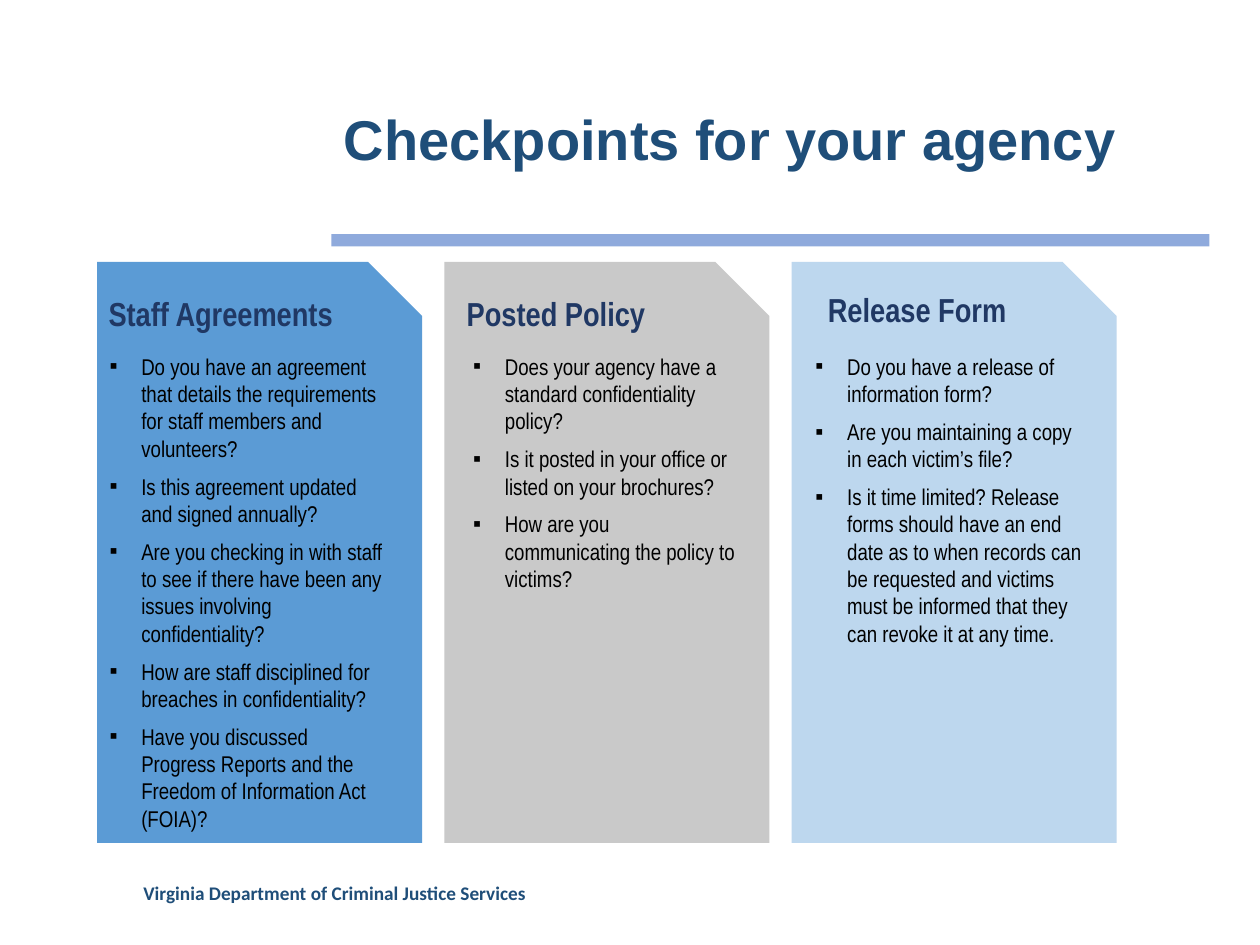
from dataclasses import dataclass

from lxml import etree
from pptx import Presentation
from pptx.dml.color import RGBColor
from pptx.enum import shapes, text
from pptx.oxml.ns import qn
from pptx.util import Cm, Pt


@dataclass(frozen=True)
class Theme:
    navy: str = "1F4E79"
    ink: str = "203864"
    black: str = "000000"
    rule: str = "8FAADC"
    title: int = 32
    head: int = 19
    body: int = 13
    foot: int = 11
    sans: str = "Arial"
    slim: str = "Arial Narrow"
    plain: str = "Calibri"


T = Theme()

# fill, heading, heading shift, heading line spacing, list shift, list width, points
COLS = [
    ("5B9BD5", "Staff Agreements", -0.02, 1.0, 0, 6.02, [
        "Do you have an agreement that details the requirements for staff members and volunteers?",
        "Is this agreement updated and signed annually?",
        "Are you checking in with staff to see if there have been any issues involving confidentiality?",
        "How are staff disciplined for breaches in confidentiality?",
        "Have you discussed Progress Reports and the Freedom of Information Act (FOIA)?"]),
    ("C9C9C9", "Posted Policy", 0.2, 1.0, 0.33, 5.84, [
        "Does your agency have a standard confidentiality policy?",
        "Is it posted in your office or listed on your brochures?",
        "How are you communicating the policy to victims?"]),
    ("BDD7EE", "Release Form", 0.48, 0.9, 0.23, 5.97, [
        "Do you have a release of information form?",
        "Are you maintaining a copy in each victim’s file?",
        "Is it time limited? Release forms should have an end date as to when records can "
        "be requested and victims must be informed that they can revoke it at any time."]),
]


def write(para, words, face, size, color, bold=False):
    run = para.add_run()
    run.text = words
    run.font.name, run.font.size, run.font.bold = face, Pt(size), bold
    run.font.color.rgb = RGBColor.from_string(color)


def block(slide, kind, box, fill):
    shape = slide.shapes.add_shape(kind, *map(Cm, box))
    shape.shadow.inherit = False
    shape.fill.solid()
    shape.fill.fore_color.rgb = RGBColor.from_string(fill)
    shape.line.fill.background()


def frame(slide, box):
    """Add a wrapping text box and return its text frame."""
    area = slide.shapes.add_textbox(*map(Cm, box)).text_frame
    area.word_wrap = True
    return area


def bullet(para):
    props = para._p.get_or_add_pPr()
    props.set("marL", str(Cm(0.64)))
    props.set("indent", str(-Cm(0.64)))
    etree.SubElement(props, qn("a:buFont")).set("typeface", T.sans)
    etree.SubElement(props, qn("a:buChar")).set("char", "▪")


def header(slide, box):
    left, top, width, height = box
    block(slide, shapes.MSO_SHAPE.RECTANGLE, (left, top + 3.7, 17.7, 0.25), T.rule)
    title = slide.shapes.title
    title.left, title.top, title.width, title.height = map(Cm, box)
    area = title.text_frame
    area.word_wrap = True
    area.auto_size = text.MSO_AUTO_SIZE.NONE
    area.vertical_anchor = text.MSO_ANCHOR.MIDDLE
    para = area.paragraphs[0]
    para.alignment = text.PP_ALIGN.LEFT
    para.line_spacing = 0.9
    write(para, "Checkpoints for your agency", T.sans, T.title, T.navy, True)


def column(slide, box, fill, head, shift, pitch, inset, span, points):
    left, top, width, height = box
    block(slide, shapes.MSO_SHAPE.SNIP_1_RECTANGLE, box, fill)
    para = frame(slide, (left + shift, top + 0.51, width, 1.1)).paragraphs[0]
    para.line_spacing = pitch
    write(para, head, T.slim, T.head, T.ink, True)
    area = frame(slide, (left + inset, top + 1.7, span, height - 2.4))
    for num, words in enumerate(points):
        para = area.add_paragraph() if num else area.paragraphs[0]
        bullet(para)
        para.space_after = Pt(6)
        write(para, words, T.slim, T.body, T.black)


def footer(slide, box):
    para = frame(slide, box).paragraphs[0]
    write(para, "Virginia Department of Criminal Justice Services",
          T.plain, T.foot, T.navy, True)


def main():
    deck = Presentation()
    deck.slide_width, deck.slide_height = Cm(25.4), Cm(19.05)
    slide = deck.slides.add_slide(deck.slide_layouts[5])
    header(slide, (6.68, 1.02, 16.97, 3.68))
    for num, col in enumerate(COLS):
        column(slide, (1.96 + 7 * num, 5.28, 6.55, 11.71), *col)
    footer(slide, (2.64, 17.65, 14.35, 1.02))
    deck.save("out.pptx")


if __name__ == "__main__":
    main()
